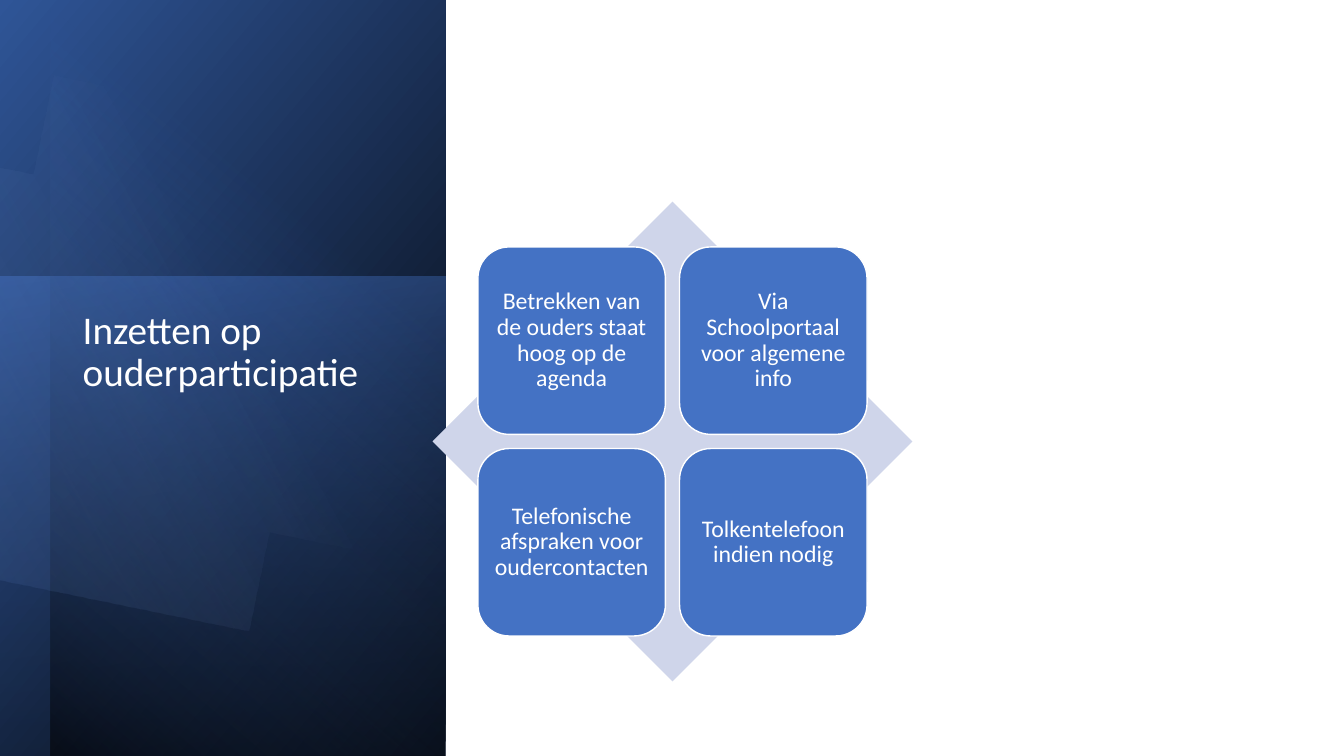
import math
from dataclasses import dataclass

from lxml import etree
from pptx import Presentation
from pptx.dml.color import RGBColor
from pptx.enum import shapes, text
from pptx.oxml import ns
from pptx.util import Inches, Pt


@dataclass(frozen=True)
class Theme:
    font: str = "Calibri"
    title_size: int = 28
    tile_size: int = 17
    white: str = "FFFFFF"
    black: str = "000000"
    blue: str = "4472C4"
    deep_blue: str = "2F5597"
    navy: str = "203864"
    light_blue: str = "8FAADC"
    pale: str = "CFD5EA"


@dataclass(frozen=True)
class Stop:
    position: float
    color: str
    opacity: int = 100


@dataclass(frozen=True)
class Panel:
    left: float
    top: float
    width: float
    height: float
    rotation: float
    flipped: bool
    angle: float
    stops: tuple[Stop, Stop]


THEME = Theme()

PANELS = (
    Panel(-1.55, 1.55, 7.52, 4.42, 90, True, 310,
          (Stop(0, THEME.black), Stop(1, THEME.deep_blue))),
    Panel(-0.17, 2.91, 4.76, 4.42, 270, False, 190,
          (Stop(0, THEME.blue, 50), Stop(1, THEME.navy, 0))),
    Panel(-1.29, 1.79, 7.5, 3.92, 270, True, 220,
          (Stop(0, THEME.black, 59), Stop(0.69, THEME.blue, 0))),
)

DISC_STOPS = (Stop(0.39, THEME.light_blue, 0), Stop(1, THEME.deep_blue, 26))
DISC_CENTER = (1.81, 3.93)
DISC_RADIUS = 2.63
DISC_ROTATION = 101.6
DISC_HALF_ARC = 122.9

TILES = (
    "Betrekken van de ouders staat hoog op de agenda",
    "Via Schoolportaal voor algemene info",
    "Telefonische afspraken voor oudercontacten",
    "Tolkentelefoon indien nodig",
)
DIAMOND_LEFT, DIAMOND_TOP, DIAMOND_SIZE = 4.29, 2, 4.76
TILE_OFFSET, TILE_SIZE, TILE_PITCH = 0.45, 1.86, 2


def fill_gradient(shape, stops: tuple[Stop, Stop], angle: float) -> None:
    shape.shadow.inherit = False
    shape.line.fill.background()
    shape.fill.gradient()
    shape.fill.gradient_angle = angle
    for gradient_stop, stop in zip(shape.fill.gradient_stops, stops):
        gradient_stop.position = stop.position
        gradient_stop.color.rgb = RGBColor.from_string(stop.color)
    colors = shape._element.spPr.findall(".//" + ns.qn("a:gs") + "/" + ns.qn("a:srgbClr"))
    for color, stop in zip(colors, stops):
        if stop.opacity < 100:
            etree.SubElement(color, ns.qn("a:alpha")).set("val", str(stop.opacity * 1000))


def fill_solid(shape, color: str) -> None:
    shape.shadow.inherit = False
    shape.fill.solid()
    shape.fill.fore_color.rgb = RGBColor.from_string(color)


def write(frame, wording: str, size: int, alignment: text.PP_ALIGN) -> None:
    frame.word_wrap = True
    paragraph = frame.paragraphs[0]
    paragraph.alignment = alignment
    paragraph.line_spacing = 0.9
    run = paragraph.add_run()
    run.text = wording
    run.font.name = THEME.font
    run.font.size = Pt(size)
    run.font.color.rgb = RGBColor.from_string(THEME.white)


def add_panel(slide, panel: Panel) -> None:
    shape = slide.shapes.add_shape(
        shapes.MSO_SHAPE.RECTANGLE, Inches(panel.left), Inches(panel.top),
        Inches(panel.width), Inches(panel.height))
    shape.rotation = panel.rotation
    if panel.flipped:
        shape._element.spPr.xfrm.set("flipH", "1")
    fill_gradient(shape, panel.stops, panel.angle)


def add_disc(slide) -> None:
    """Draw a circle cut off along the left slide edge."""
    steps = 120
    points = []
    for step in range(steps + 1):
        degrees = DISC_HALF_ARC * (2 * step / steps - 1) - DISC_ROTATION
        turn = math.radians(degrees)
        points.append((DISC_CENTER[0] + DISC_RADIUS * math.cos(turn),
                       DISC_CENTER[1] + DISC_RADIUS * math.sin(turn)))
    builder = slide.shapes.build_freeform(*points[0], scale=Inches(1))
    builder.add_line_segments(points[1:], close=True)
    disc = builder.convert_to_shape()
    disc.rotation = DISC_ROTATION
    fill_gradient(disc, DISC_STOPS, 310)


def place_title(slide) -> None:
    title = slide.shapes.title
    title.left, title.top = Inches(0.72), Inches(3.03)
    title.width, title.height = Inches(3.15), Inches(3.36)
    frame = title.text_frame
    frame.vertical_anchor = text.MSO_ANCHOR.TOP
    frame.auto_size = text.MSO_AUTO_SIZE.NONE
    write(frame, "Inzetten op ouderparticipatie", THEME.title_size, text.PP_ALIGN.LEFT)
    # Bring the title in front of the gradient panels.
    slide.shapes._spTree.append(title._element)


def add_tile(group, index: int, wording: str) -> None:
    row, column = divmod(index, 2)
    tile = group.shapes.add_shape(
        shapes.MSO_SHAPE.ROUNDED_RECTANGLE,
        Inches(DIAMOND_LEFT + TILE_OFFSET + column * TILE_PITCH),
        Inches(DIAMOND_TOP + TILE_OFFSET + row * TILE_PITCH),
        Inches(TILE_SIZE), Inches(TILE_SIZE))
    fill_solid(tile, THEME.blue)
    tile.line.color.rgb = RGBColor.from_string(THEME.white)
    tile.line.width = Pt(1)
    frame = tile.text_frame
    frame.margin_left = frame.margin_right = Inches(0.07)
    frame.margin_top = frame.margin_bottom = Inches(0.07)
    frame.vertical_anchor = text.MSO_ANCHOR.MIDDLE
    write(frame, wording, THEME.tile_size, text.PP_ALIGN.CENTER)


def add_matrix(slide) -> None:
    group = slide.shapes.add_group_shape()
    diamond = group.shapes.add_shape(
        shapes.MSO_SHAPE.DIAMOND, Inches(DIAMOND_LEFT), Inches(DIAMOND_TOP),
        Inches(DIAMOND_SIZE), Inches(DIAMOND_SIZE))
    fill_solid(diamond, THEME.pale)
    diamond.line.fill.background()
    for index, wording in enumerate(TILES):
        add_tile(group, index, wording)


def main() -> None:
    presentation = Presentation()
    presentation.slide_width = Inches(13.33)
    presentation.slide_height = Inches(7.5)
    slide = presentation.slides.add_slide(presentation.slide_layouts[5])
    for panel in PANELS:
        add_panel(slide, panel)
    add_disc(slide)
    place_title(slide)
    add_matrix(slide)
    presentation.save("out.pptx")


if __name__ == "__main__":
    main()
